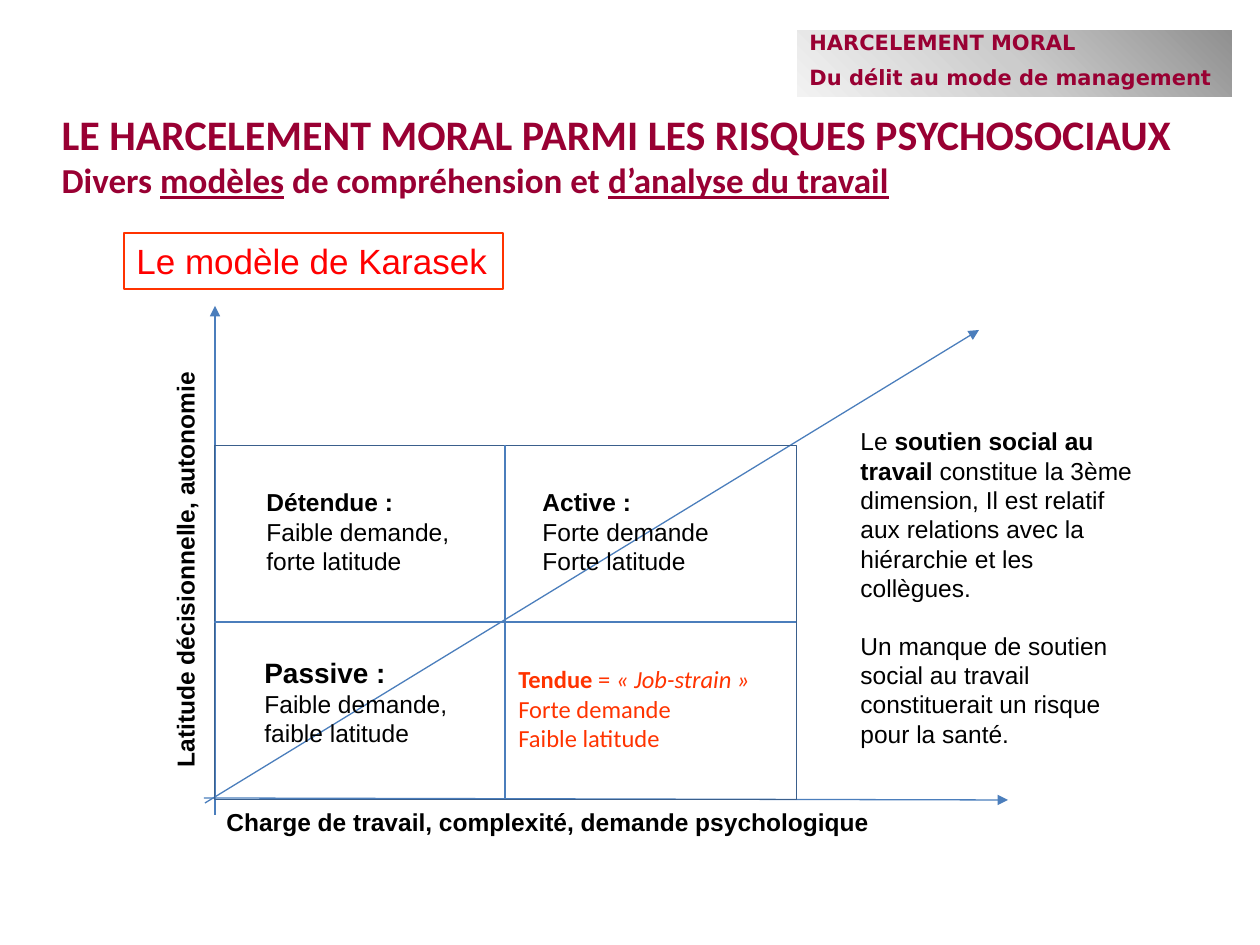
from dataclasses import dataclass

from lxml import etree
from pptx import Presentation
from pptx.dml.color import RGBColor
from pptx.enum.shapes import MSO_CONNECTOR, MSO_SHAPE
from pptx.enum.text import MSO_ANCHOR, PP_ALIGN
from pptx.oxml import parse_xml
from pptx.oxml.ns import nsdecls, qn
from pptx.util import Emu, Pt

PX = 914400 / 126


def px(*lengths):
    return [Emu(round(n * PX)) for n in lengths]


@dataclass(frozen=True)
class Theme:
    text: str = "000000"
    wine: str = "990033"
    red: str = "FF0000"
    orange: str = "FF3300"
    axis: str = "4B7EBC"
    frame: str = "3A5F8C"
    banner: tuple = ((0, "909090"), (50, "CCCCCC"), (100, "F2F2F2"))
    sans: str = "Arial"
    head: str = "Calibri"
    wide: str = "DejaVu Sans"
    small: int = 12
    body: int = 14
    label: int = 16
    large: int = 20
    title: int = 24


class Deck:
    def __init__(self, prs, theme):
        self.t = theme
        self.s = prs.slides.add_slide(prs.slide_layouts[5])

    def style(self, font, size=None, color=None, name=None, **flags):
        if size:
            font.size = Pt(size)
        if color:
            font.color.rgb = RGBColor.from_string(color)
        if name:
            font.name = name
        for flag, value in flags.items():
            setattr(font, flag, value)

    def paragraphs(self, tf, paras, gap=0, spacing=None, **base):
        base = {"size": self.t.body, "color": self.t.text, "name": self.t.sans, **base}
        for i, (runs, own) in enumerate(paras):
            p = tf.add_paragraph() if i else tf.paragraphs[0]
            p.alignment = PP_ALIGN.LEFT
            if spacing:
                p.line_spacing = spacing
            if i and gap:
                p.space_before = Pt(gap)
            self.style(p.font, **{**base, **own})
            for text, flags in runs:
                if text == "\n":
                    p.add_line_break()
                    continue
                r = p.add_run()
                r.text = text
                self.style(r.font, **flags)

    def title(self, box, runs):
        sp = self.s.shapes.title
        sp.left, sp.top, sp.width, sp.height = px(*box)
        tf = sp.text_frame
        tf.word_wrap = True
        tf.vertical_anchor = MSO_ANCHOR.MIDDLE
        self.paragraphs(tf, [(runs, {})], size=None, name=self.t.head,
                        color=self.t.wine, bold=True)

    def text(self, box, paras, vert=None, **base):
        sp = self.s.shapes.add_textbox(*px(*box))
        tf = sp.text_frame
        tf.word_wrap = True
        if vert:
            sp._element.txBody.find(qn("a:bodyPr")).set("vert", vert)
        self.paragraphs(tf, paras, **base)

    def rect(self, box, line=None, width=0.75, paras=(), wrap=True, **base):
        sp = self.s.shapes.add_shape(MSO_SHAPE.RECTANGLE, *px(*box))
        sp.shadow.inherit = False
        sp.fill.background()
        if line:
            sp.line.color.rgb = RGBColor.from_string(line)
            sp.line.width = Pt(width)
        else:
            sp.line.fill.background()
        sp.text_frame.word_wrap = wrap
        sp.text_frame.vertical_anchor = MSO_ANCHOR.TOP
        self.paragraphs(sp.text_frame, paras, **base)
        return sp

    def radial(self, sp, stops):
        gs = "".join(f'<a:gs pos="{pos * 1000}"><a:srgbClr val="{color}"/></a:gs>'
                     for pos, color in stops)
        grad = parse_xml(
            f'<a:gradFill {nsdecls("a")} rotWithShape="1"><a:gsLst>{gs}</a:gsLst>'
            '<a:path path="circle"><a:fillToRect l="100000" b="100000"/></a:path>'
            '</a:gradFill>')
        spPr = sp._element.spPr
        spPr.replace(spPr.find(qn("a:noFill")), grad)

    def line(self, ends, arrow=False, join=None):
        c = self.s.shapes.add_connector(MSO_CONNECTOR.STRAIGHT, *px(*ends))
        c.line.color.rgb = RGBColor.from_string(self.t.axis)
        c.line.width = Pt(0.75)
        spPr = c._element.spPr
        if arrow:
            tail = etree.SubElement(spPr.find(qn("a:ln")), qn("a:tailEnd"))
            tail.set("type", "triangle")
        etree.SubElement(spPr, qn("a:effectLst"))
        if join:
            sp, start, end = join
            c.begin_connect(sp, start)
            c.end_connect(sp, end)


def plain(text, **own):
    return [(text, {})], own


def main():
    prs = Presentation()
    prs.slide_width, prs.slide_height = px(1260, 945)
    t = Theme()
    d = Deck(prs, t)
    bold = {"bold": True}
    under = {"size": t.large, "underline": True}

    d.title((49, 86, 1183, 137), [
        ("LE HARCELEMENT MORAL PARMI LES RISQUES PSYCHOSOCIAUX", {"size": t.title}),
        ("\n", {}),
        ("Divers ", {"size": t.large}),
        ("modèles", under),
        (" de compréhension et ", {"size": t.large}),
        ("d’analyse du travail", under),
    ])

    for ends in ((204, 798, 1008, 800), (215, 815, 215, 306), (205, 803, 979, 330)):
        d.line(ends, arrow=True)
    d.text((164, 352, 80, 428), [plain("Latitude décisionnelle, autonomie")],
           vert="vert270", **bold)
    d.text((214, 801, 735, 43),
           [plain("Charge de travail, complexité, demande psychologique")], **bold)

    quadrants = (
        ((252, 649, 218, 106), "Passive :", t.label, ["Faible demande, faible latitude"]),
        ((254, 481, 208, 102), "Détendue :", t.body, ["Faible demande,", "forte latitude"]),
        ((530, 481, 248, 102), "Active :", t.body, ["Forte demande", "Forte latitude"]),
    )
    for box, name, size, lines in quadrants:
        d.text(box, [plain(name, size=size, bold=True)] + [plain(n) for n in lines])
    d.text((506, 658, 290, 110), [
        ([("Tendue", bold), (" = ", {}), ("«\u00a0Job-strain\u00a0»", {"italic": True})], {}),
        plain("Forte demande"),
        plain("Faible latitude"),
    ], name=t.head, color=t.orange)

    grid = d.rect((214, 445, 582, 354), t.frame, 0.25)
    d.line((505, 445, 505, 799), join=(grid, 0, 2))
    d.line((214, 622, 796, 622), join=(grid, 1, 3))

    d.text((848, 420, 297, 339), [
        ([("Le", {}), (" soutien social au travail", bold),
          (" constitue la 3ème dimension, Il est relatif aux relations avec la "
           "hiérarchie et les collègues.", {})], {}),
        plain("Un manque de soutien social au travail constituerait un risque "
              "pour la santé."),
    ], gap=16)

    d.rect((124, 233, 379, 56), t.orange, paras=[plain("Le modèle de Karasek")],
           wrap=False, size=t.large, color=t.red)
    banner = d.rect((797, 30, 435, 67), paras=[
        plain("HARCELEMENT MORAL"),
        plain("Du délit au mode de management"),
    ], gap=10, spacing=0.7, size=t.small, color=t.wine, name=t.wide, **bold)
    d.radial(banner, t.banner)

    prs.save("out.pptx")


if __name__ == "__main__":
    main()
